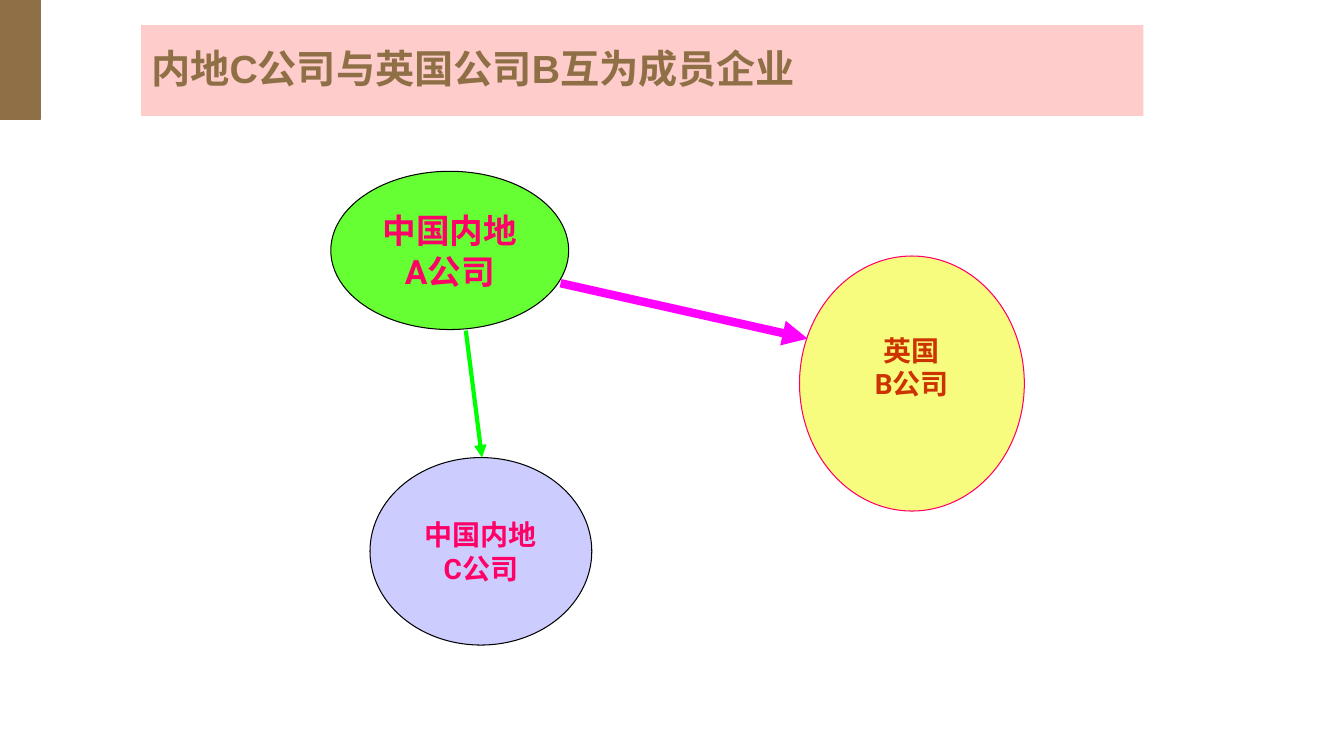
from pptx import Presentation
from pptx.dml.color import RGBColor
from pptx.enum.shapes import MSO_CONNECTOR, MSO_SHAPE
from pptx.enum.text import MSO_ANCHOR, MSO_AUTO_SIZE, PP_ALIGN
from pptx.oxml.ns import qn
from pptx.util import Inches, Pt
from lxml.etree import SubElement

COLORS = {
    "brown": "8F7046", "pink": "FFCCCC", "green": "66FF33", "lime": "00FF00",
    "yellow": "F7FC7E", "lilac": "CCCCFF", "rose": "FF0066",
    "magenta": "FF00FF", "rust": "CC3300", "black": "000000",
}


def rgb(name):
    return RGBColor.from_string(COLORS[name])


def point(box, x, y):
    """Turn percentages of a box into slide coordinates."""
    left, top, width, height = box
    return int(left + width * x / 100), int(top + height * y / 100)


def area(box, x, y, w, h):
    left, top = point(box, x, y)
    right, bottom = point(box, x + w, y + h)
    return left, top, right - left, bottom - top


def add_run(p, text, font, size, color):
    r = p.add_run()
    r.text = text
    r.font.name, r.font.size, r.font.bold = font, Pt(size), True
    r.font.color.rgb = rgb(color)


def add_filled(s, kind, box, fill, line, width):
    sp = s.shapes.add_shape(kind, *box)
    sp.shadow.inherit = False
    sp.fill.solid()
    sp.fill.fore_color.rgb = rgb(fill)
    sp.line.color.rgb = rgb(line)
    sp.line.width = Pt(width)
    return sp


def add_company(s, box, lines, size, color, fill, line, lift=0):
    """Ellipse with centred lines; lift raises the text by extra bottom inset."""
    sp = add_filled(s, MSO_SHAPE.OVAL, box, fill, line, 0.75)
    tf = sp.text_frame
    tf.word_wrap = False
    tf.vertical_anchor = MSO_ANCHOR.MIDDLE
    tf.margin_bottom = Inches(0.05 + lift)
    for i, text in enumerate(lines):
        p = tf.add_paragraph() if i else tf.paragraphs[0]
        p.alignment = PP_ALIGN.CENTER
        add_run(p, text, "Roboto", size, color)


def add_arrow(s, start, end, color, width):
    c = s.shapes.add_connector(MSO_CONNECTOR.STRAIGHT, *start, *end)
    c.line.color.rgb = rgb(color)
    c.line.width = Pt(width)
    SubElement(c.line._get_or_add_ln(), qn("a:tailEnd"), type="triangle")
    SubElement(c._element.spPr, qn("a:effectLst"))


def add_header(s, box):
    # Corner band
    add_filled(s, MSO_SHAPE.RECTANGLE, area(box, -0.08, 0, 3.08, 100),
               "brown", "brown", 1)
    # Title
    sp = s.shapes.title
    sp.left, sp.top, sp.width, sp.height = area(box, 10.5, 21.2, 74.57, 76.3)
    sp.fill.solid()
    sp.fill.fore_color.rgb = rgb("pink")
    tf = sp.text_frame
    tf.word_wrap = True
    tf.auto_size = MSO_AUTO_SIZE.NONE
    tf.vertical_anchor = MSO_ANCHOR.MIDDLE
    p = tf.paragraphs[0]
    p.alignment = PP_ALIGN.LEFT
    p.line_spacing = 0.9
    add_run(p, "内地C公司与英国公司B互为成员企业", "Arial", 28, "brown")


def add_ownership(s, box):
    # Companies
    add_company(s, area(box, 24.61, 8.22, 17.7, 24.84), ["中国内地", "A公司"],
                24, "rose", "green", "black")
    add_company(s, area(box, 59.49, 21.52, 16.73, 40.03), ["英国", "B公司"],
                20, "rust", "yellow", "rose", lift=0.33)
    add_company(s, area(box, 27.53, 53.16, 16.5, 29.43), ["中国内地", "C公司"],
                20, "rose", "lilac", "black")
    # Holdings of company A
    add_arrow(s, point(box, 41.71, 25.79), point(box, 60.09, 34.49), "magenta", 6)
    add_arrow(s, point(box, 34.66, 33.23), point(box, 35.86, 53.16), "lime", 3)


def main():
    prs = Presentation()
    prs.slide_width, prs.slide_height = Inches(13.33), Inches(7.5)
    s = prs.slides.add_slide(prs.slide_layouts[5])
    header = Inches(1.18)
    add_header(s, (0, 0, prs.slide_width, header))
    add_ownership(s, (0, header, prs.slide_width, prs.slide_height - header))
    prs.save("out.pptx")


if __name__ == "__main__":
    main()
